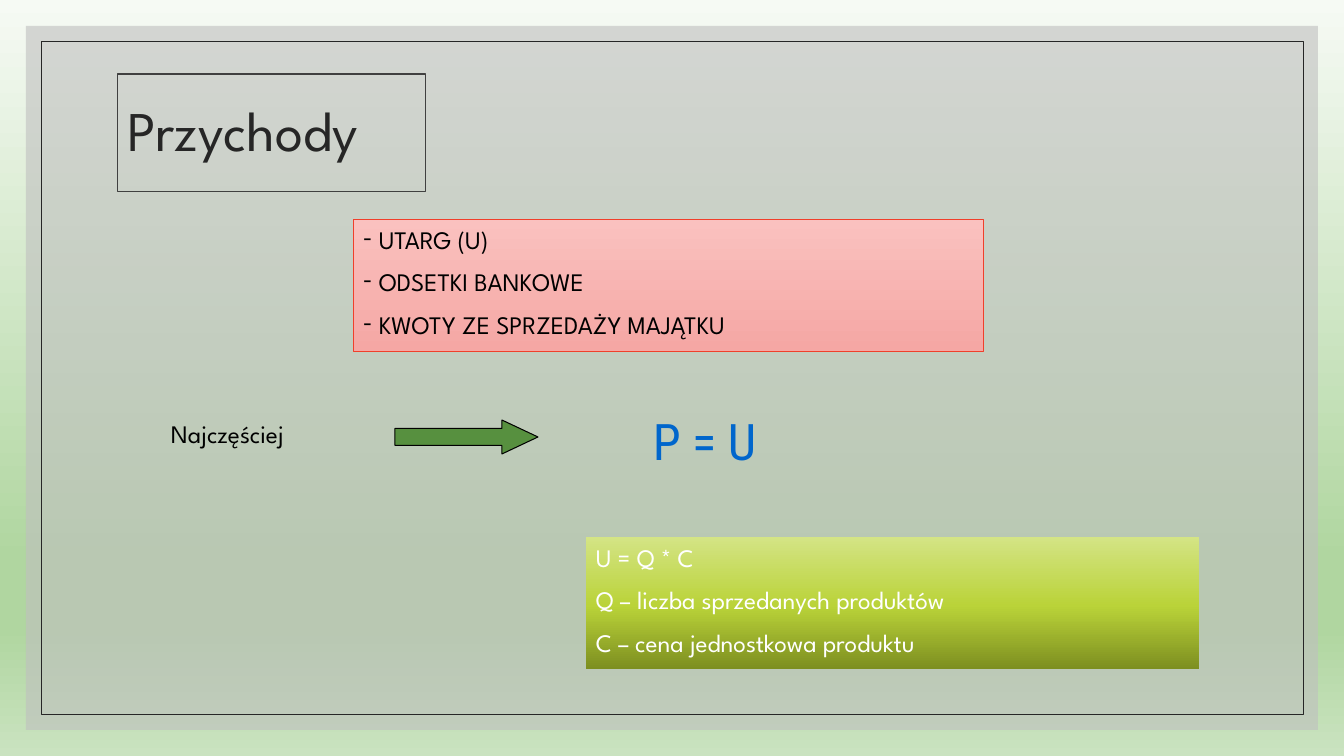
from pptx import Presentation
from pptx import util as u
from pptx.dml.color import RGBColor
from pptx.enum import shapes, text
from pptx.oxml import ns, xmlchemy

WIDTH, HEIGHT = 1344, 756
FONT = "League Spartan"
PINK = ((0, "FAC1BF"), (100, "F5A7A4"))
LIME = ((0, "D4E485"), (52, "BAD339"), (100, "7D8F20"))
BACKGROUND = ((0, "F6FAF4"), (74, "B0D6A0"), (83, "B0D6A0"), (100, "CAE3C0"))


def px(length):
    """Turn pixels into EMU."""
    return u.Emu(round(length * 914400 / 100.8))


def color(value):
    """Turn a hex string into a colour."""
    return RGBColor.from_string(value)


def add_child(parent, tag, **attributes):
    """Append an XML element with the given attributes."""
    child = xmlchemy.OxmlElement(tag)
    for name, value in attributes.items():
        child.set(name, str(value))
    parent.append(child)
    return child


def set_gradient(fill, element, stops):
    """Fill with a gradient whose stops run from top to bottom."""
    fill.gradient()
    fill.gradient_angle = 270
    stop_list = element.find(".//" + ns.qn("a:gsLst"))
    for old_stop in list(stop_list):
        stop_list.remove(old_stop)
    for percent, value in stops:
        stop = add_child(stop_list, "a:gs", pos=percent * 1000)
        add_child(stop, "a:srgbClr", val=value)


def add_box(slide, box, kind=shapes.MSO_SHAPE.RECTANGLE, fill=None, line=None, weight=0.5):
    """Add a shape without shadow, with a plain fill and line."""
    shape = slide.shapes.add_shape(kind, *map(px, box))
    shape.shadow.inherit = False
    if fill:
        shape.fill.solid()
        shape.fill.fore_color.rgb = color(fill)
    else:
        shape.fill.background()
    if line:
        shape.line.color.rgb = color(line)
        shape.line.width = u.Pt(weight)
    else:
        shape.line.fill.background()
    return shape


def write(shape, lines, size, value, font=FONT, anchor=text.MSO_ANCHOR.TOP,
          align=text.PP_ALIGN.LEFT, wrap=True, before=0, bullet=None):
    """Write one paragraph for each line."""
    frame = shape.text_frame
    frame.word_wrap = wrap
    frame.vertical_anchor = anchor
    for index, line in enumerate(lines):
        paragraph = frame.add_paragraph() if index else frame.paragraphs[0]
        paragraph.alignment = align
        paragraph.space_before = u.Pt(before)
        if bullet:
            properties = paragraph._p.get_or_add_pPr()
            add_child(properties, "a:buFont", typeface=font)
            add_child(properties, "a:buChar", char=bullet)
        run = paragraph.add_run()
        run.text = line
        run.font.name = font
        run.font.size = u.Pt(size)
        run.font.color.rgb = color(value)
    return frame


def add_frame(slide, box):
    """Draw the translucent panel and the thin border inside it."""
    left, top, width, height = box
    panel = add_box(slide, box, fill="BFBFBF")
    panel_color = panel.element.spPr.find(".//" + ns.qn("a:srgbClr"))
    add_child(panel_color, "a:alpha", val=60000)
    add_box(slide, (left + 15, top + 15, width - 30, height - 31), line="262626")


def add_title(slide, box):
    """Place the framed title."""
    shape = add_box(slide, box, line="404040", weight=0.75)
    frame = write(shape, ["Przychody"], 40, "262626", anchor=text.MSO_ANCHOR.MIDDLE)
    frame.paragraphs[0].line_spacing = 0.9


def add_list(slide, box, lines, stops, value, line=None, bullet=None):
    """Place a gradient panel with a list."""
    shape = add_box(slide, box, line=line)
    set_gradient(shape.fill, shape.element, stops)
    write(shape, lines, 18, value, before=9, bullet=bullet)


def add_formula(slide, box):
    """Place the label, the arrow and the formula in a row."""
    left, top, width, height = box
    label = slide.shapes.add_textbox(*map(px, (left, top + 8, 184, 40)))
    write(label, ["Najczęściej"], 18, "000000", before=9)
    arrow = add_box(slide, (left + 234, top + 15, 143, 34),
                    shapes.MSO_SHAPE.RIGHT_ARROW, "57903F", "000000", 0.75)
    arrow.adjustments[1] = 1.06
    formula = slide.shapes.add_textbox(*map(px, (left + width - 119, top, 119, height)))
    frame = write(formula, ["P = U"], 36, "0066CC", "Roboto Condensed",
                  align=text.PP_ALIGN.CENTER, wrap=False)
    frame.margin_left = frame.margin_right = 0


def build_slide(presentation):
    """Build the revenue slide."""
    slide = presentation.slides.add_slide(presentation.slide_layouts[6])
    set_gradient(slide.background.fill, slide.element, BACKGROUND)
    add_frame(slide, (26, 26, WIDTH - 52, HEIGHT - 52))
    add_title(slide, (118, 74, 308, 118))
    add_list(slide, (353, 219, 630, 132),
             [" UTARG (U)", " ODSETKI BANKOWE", " KWOTY ZE SPRZEDAŻY MAJĄTKU"],
             PINK, "000000", line="F03F2B", bullet="-")
    add_formula(slide, (161, 405, 603, 77))
    add_list(slide, (586, 537, 613, 132),
             ["U = Q * C", "Q – liczba sprzedanych produktów", "C – cena jednostkowa produktu"],
             LIME, "FFFFFF")


def main():
    """Save the presentation."""
    presentation = Presentation()
    presentation.slide_width = px(WIDTH)
    presentation.slide_height = px(HEIGHT)
    build_slide(presentation)
    presentation.save("out.pptx")


if __name__ == "__main__":
    main()
